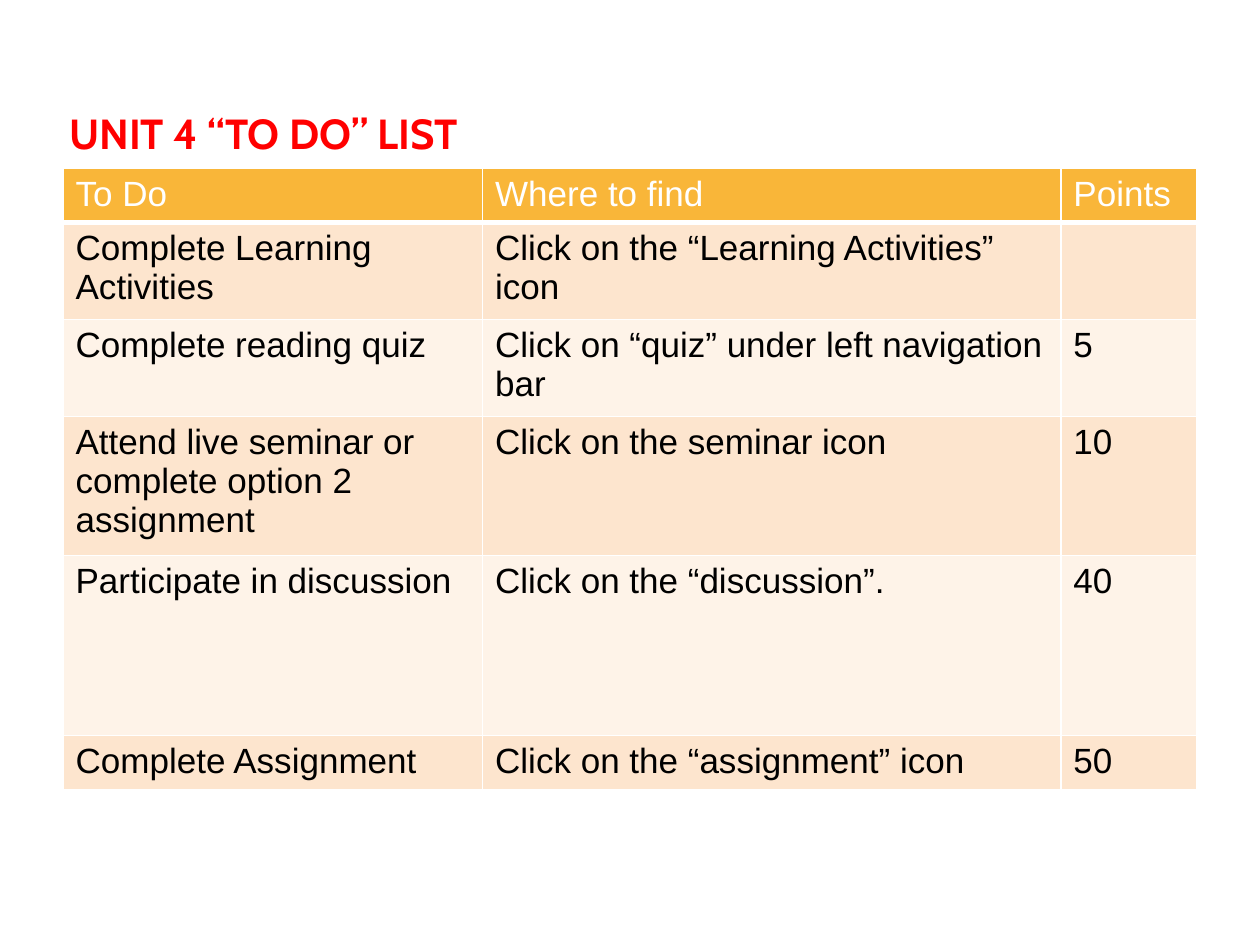
from dataclasses import dataclass

from lxml.etree import SubElement
from pptx import Presentation
from pptx.dml.color import RGBColor
from pptx.enum.text import MSO_ANCHOR
from pptx.oxml.ns import qn
from pptx.util import Inches, Pt

SLIDE_WIDTH, SLIDE_HEIGHT = Inches(10), Inches(7.5)
LEFT = 0.05
CONTENT_WIDTH = 0.9
TITLE_HEIGHT = 1 / 6
TABLE_TOP = 0.1778
COLUMN_SHARES = (0.37, 0.51, 0.12)
WHITE, BLACK, RED = "FFFFFF", "000000", "FF0000"
HEADER_FILL = "F9B639"
BAND_FILLS = ("FDE5CE", "FEF3E8")


@dataclass(frozen=True)
class TaskRow:
    task: str
    place: str
    points: str
    height: float


ROWS = (
    TaskRow("To Do", "Where to find", "Points", 0.43),
    TaskRow("Complete Learning Activities", "Click on the “Learning Activities” icon", "", 0.77),
    TaskRow("Complete reading quiz", "Click on “quiz” under left navigation bar", "5", 0.77),
    TaskRow("Attend live seminar or complete option 2 assignment", "Click on the seminar icon", "10", 1.1),
    TaskRow("Participate in discussion", "Click on the “discussion”.", "40", 1.43),
    TaskRow("Complete Assignment", "Click on the “assignment” icon", "50", 0.43),
)


def color(value: str) -> RGBColor:
    return RGBColor.from_string(value)


def style_font(paragraph, name: str, size: float, value: str, bold: bool) -> None:
    for run in paragraph.runs:
        run.font.name = name
        run.font.size = Pt(size)
        run.font.bold = bold
        run.font.color.rgb = color(value)


def add_borders(cell, bottom_width: float) -> None:
    properties = cell._tc.get_or_add_tcPr()
    widths = {"lnL": 1, "lnR": 1, "lnT": 1, "lnB": bottom_width}
    for position, (side, width) in enumerate(widths.items()):
        line = SubElement(properties, qn(f"a:{side}"), w=str(Pt(width)))
        fill = SubElement(line, qn("a:solidFill"))
        SubElement(fill, qn("a:srgbClr"), val=WHITE)
        properties.insert(position, line)


def add_title(slide, text: str) -> None:
    shape = slide.shapes.add_textbox(
        int(SLIDE_WIDTH * LEFT), 0, int(SLIDE_WIDTH * CONTENT_WIDTH), int(SLIDE_HEIGHT * TITLE_HEIGHT)
    )
    frame = shape.text_frame
    frame.word_wrap = True
    frame.vertical_anchor = MSO_ANCHOR.BOTTOM
    frame.margin_left = frame.margin_right = Inches(0.05)
    frame.margin_top = frame.margin_bottom = 0
    frame.text = text
    style_font(frame.paragraphs[0], "Cabin", 24, RED, True)


def add_task_table(slide, rows: tuple[TaskRow, ...]) -> None:
    width = int(SLIDE_WIDTH * CONTENT_WIDTH)
    table = slide.shapes.add_table(
        len(rows), len(COLUMN_SHARES),
        int(SLIDE_WIDTH * LEFT), int(SLIDE_HEIGHT * TABLE_TOP),
        width, Inches(sum(row.height for row in rows)),
    ).table
    table.horz_banding = False
    for column, share in zip(table.columns, COLUMN_SHARES):
        column.width = int(width * share)
    for index, row in enumerate(rows):
        is_header = index == 0
        table.rows[index].height = Inches(row.height)
        for column, text in enumerate((row.task, row.place, row.points)):
            cell = table.cell(index, column)
            cell.text_frame.text = text
            style_font(cell.text_frame.paragraphs[0], "Arial", 20, WHITE if is_header else BLACK, False)
            cell.fill.solid()
            cell.fill.fore_color.rgb = color(HEADER_FILL if is_header else BAND_FILLS[(index - 1) % 2])
            add_borders(cell, 3 if is_header else 1)


def main() -> None:
    presentation = Presentation()
    presentation.slide_width, presentation.slide_height = SLIDE_WIDTH, SLIDE_HEIGHT
    slide = presentation.slides.add_slide(presentation.slide_layouts[6])
    add_title(slide, "UNIT 4 “TO DO” LIST")
    add_task_table(slide, ROWS)
    presentation.save("out.pptx")


if __name__ == "__main__":
    main()
